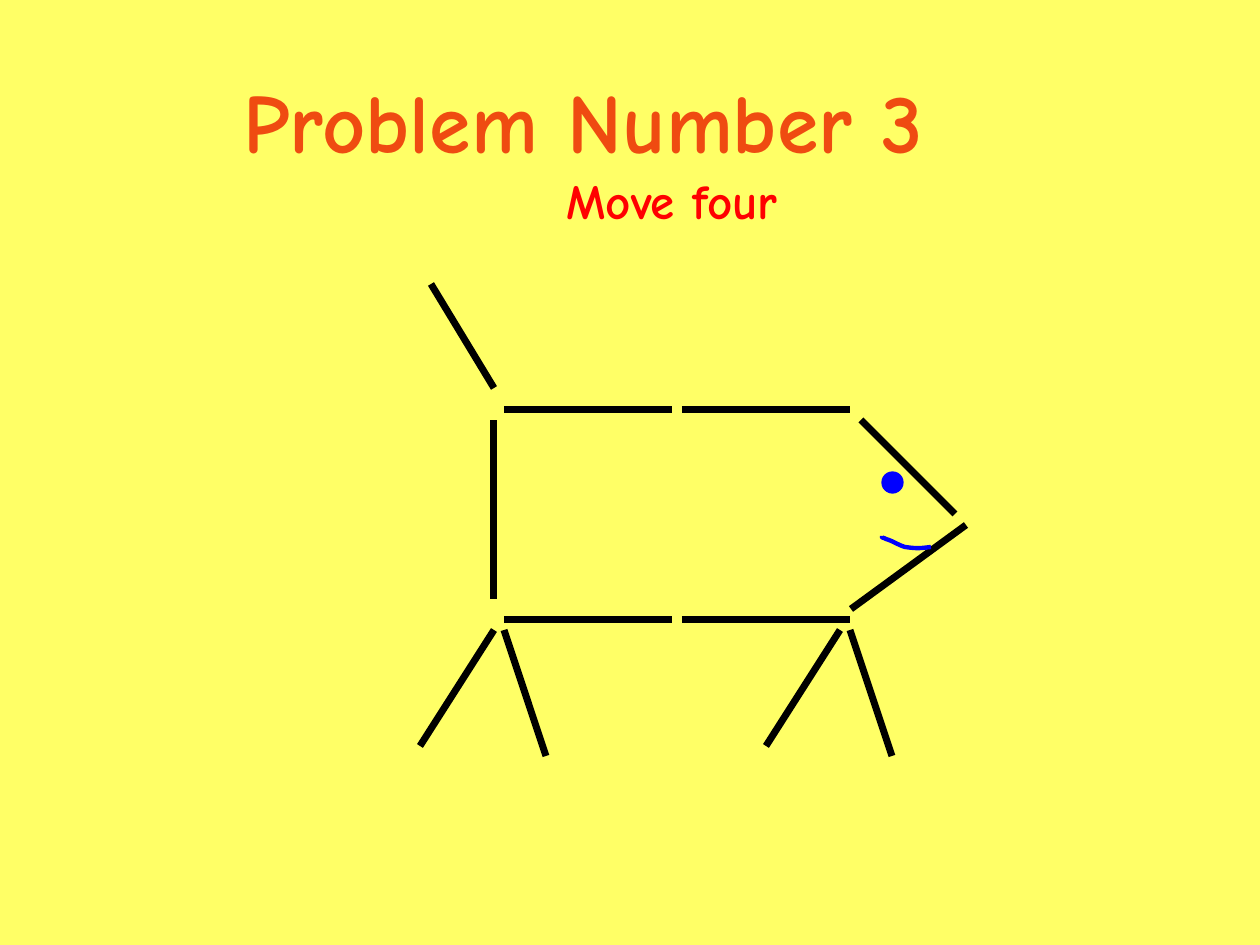
from dataclasses import dataclass
from typing import NamedTuple

import lxml.etree
import pptx
import pptx.dml.color
import pptx.enum.shapes
import pptx.enum.text
import pptx.oxml.ns
import pptx.util

PX = 914400 / 126


@dataclass(frozen=True)
class Theme:
    background: str = "FFFF66"
    title: str = "EF4B11"
    hint: str = "FF0000"
    stick: str = "000000"
    face: str = "0000FF"
    font: str = "Comic Neue"
    title_size: int = 48
    hint_size: int = 28
    stick_width: float = 4
    eye_width: float = 0.75
    mouth_width: float = 2.5


class Point(NamedTuple):
    x: int
    y: int


class Stick(NamedTuple):
    start: Point
    end: Point


class Curve(NamedTuple):
    """A cubic Bezier curve."""
    start: Point
    control_a: Point
    control_b: Point
    end: Point


THEME = Theme()

BODY = [
    Stick(Point(494, 599), Point(494, 420)),
    Stick(Point(494, 388), Point(431, 284)),
]
BODY += [Stick(Point(x, y), Point(x + 168, y)) for y in (410, 620) for x in (504, 682)]
HEAD = [
    Stick(Point(861, 420), Point(955, 514)),
    Stick(Point(966, 525), Point(851, 609)),
]
LEGS = [
    leg
    for hip in (494, 840)
    for leg in (
        Stick(Point(hip - 74, 746), Point(hip, 630)),
        Stick(Point(hip + 52, 756), Point(hip + 10, 630)),
    )
]
MOUTH = [
    Curve(Point(931, 547), Point(921, 548), Point(919, 549), Point(905, 547)),
    Curve(Point(905, 547), Point(896, 544), Point(893, 541), Point(886, 539)),
    Curve(Point(886, 539), Point(882, 537), Point(882, 538), Point(882, 536)),
]


def px(value: float) -> int:
    return round(value * PX)


def color(code: str) -> pptx.dml.color.RGBColor:
    return pptx.dml.color.RGBColor.from_string(code)


def set_line(shape, code: str, width: float) -> None:
    shape.line.color.rgb = color(code)
    shape.line.width = pptx.util.Pt(width)


def draw_stick(page, stick: Stick) -> None:
    line = page.shapes.add_connector(
        pptx.enum.shapes.MSO_CONNECTOR.STRAIGHT,
        *(px(value) for point in stick for value in point),
    )
    set_line(line, THEME.stick, THEME.stick_width)
    properties = line._element.spPr
    lxml.etree.SubElement(properties, pptx.oxml.ns.qn("a:effectLst"))


def curve_points(curve: Curve, steps: int = 8) -> list[tuple[int, int]]:
    """Points along the curve after its start, in EMU."""
    points = []
    for step in range(1, steps + 1):
        t = step / steps
        weights = ((1 - t) ** 3, 3 * t * (1 - t) ** 2, 3 * t**2 * (1 - t), t**3)
        points.append(tuple(
            px(sum(weight * value for weight, value in zip(weights, axis)))
            for axis in zip(*curve)
        ))
    return points


def draw_mouth(page, curves: list[Curve]) -> None:
    start = curves[0].start
    builder = page.shapes.build_freeform(px(start.x), px(start.y))
    for curve in curves:
        builder.add_line_segments(curve_points(curve), close=False)
    mouth = builder.convert_to_shape()
    mouth.shadow.inherit = False
    mouth.fill.background()
    set_line(mouth, THEME.face, THEME.mouth_width)


def draw_eye(page, left: int, top: int, size: int) -> None:
    eye = page.shapes.add_shape(
        pptx.enum.shapes.MSO_SHAPE.OVAL, px(left), px(top), px(size), px(size)
    )
    eye.shadow.inherit = False
    eye.fill.solid()
    eye.fill.fore_color.rgb = color(THEME.face)
    set_line(eye, THEME.face, THEME.eye_width)


def write(para, text: str, *, size: int, code: str, bold: bool = True,
          align=pptx.enum.text.PP_ALIGN.LEFT) -> None:
    para.alignment = align
    span = para.add_run()
    span.text = text
    span.font.name = THEME.font
    span.font.size = pptx.util.Pt(size)
    span.font.bold = bold
    span.font.color.rgb = color(code)


def draw_heading(page) -> None:
    box = page.shapes.add_textbox(px(231), px(63), px(882), px(173))
    frame = box.text_frame
    frame.word_wrap = True
    frame.auto_size = pptx.enum.text.MSO_AUTO_SIZE.SHAPE_TO_FIT_TEXT
    write(frame.paragraphs[0], "Problem Number 3",
          size=THEME.title_size, code=THEME.title)
    write(frame.add_paragraph(), "Move four", size=THEME.hint_size,
          code=THEME.hint, align=pptx.enum.text.PP_ALIGN.CENTER)


def main() -> None:
    deck = pptx.Presentation()
    deck.slide_width, deck.slide_height = px(1260), px(945)
    page = deck.slides.add_slide(deck.slide_layouts[6])
    page.background.fill.solid()
    page.background.fill.fore_color.rgb = color(THEME.background)
    draw_heading(page)
    for stick in BODY + HEAD + LEGS:
        draw_stick(page, stick)
    draw_eye(page, 882, 472, 21)
    draw_mouth(page, MOUTH)
    deck.save("out.pptx")


if __name__ == "__main__":
    main()
